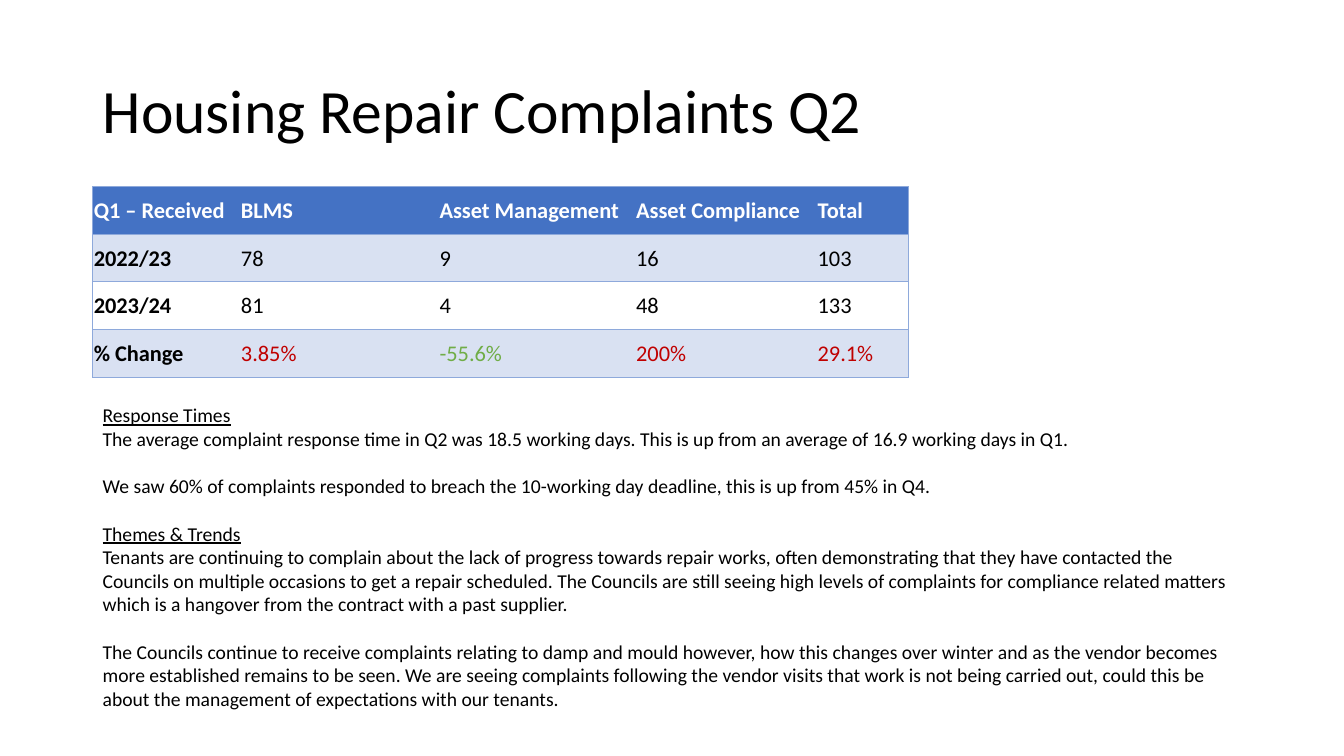
from lxml.etree import SubElement
from pptx import Presentation
from pptx.dml.color import RGBColor
from pptx.enum.text import MSO_ANCHOR
from pptx.oxml.ns import qn
from pptx.util import Inches, Pt

BLACK = RGBColor(0, 0, 0)
WHITE = RGBColor(0xFF, 0xFF, 0xFF)
BLUE = RGBColor(0x44, 0x72, 0xC4)
PALE = RGBColor(0xD9, 0xE1, 0xF2)
RULE = RGBColor(0x8E, 0xA9, 0xDB)
RED = RGBColor(0xC0, 0, 0)
GREEN = RGBColor(0x70, 0xAD, 0x47)

FONT = "Calibri"
TITLE = "Housing Repair Complaints Q2"
ROWS = [
    ("Q1 – Received", "BLMS", "Asset Management", "Asset Compliance", "Total"),
    ("2022/23", "78", "9", "16", "103"),
    ("2023/24", "81", "4", "48", "133"),
    ("% Change", "3.85%", "-55.6%", "200%", "29.1%"),
]
FILLS = [BLUE, PALE, WHITE, PALE]
COL_WIDTHS = [1.46, 1.97, 1.95, 1.8, 0.91]
ROW_HEIGHT = 0.4725
SECTIONS = [
    ("Response Times", [
        "The average complaint response time in Q2 was 18.5 working days. "
        "This is up from an average of 16.9 working days in Q1.",
        "We saw 60% of complaints responded to breach the 10-working day deadline, "
        "this is up from 45% in Q4.",
    ]),
    ("Themes & Trends", [
        "Tenants are continuing to complain about the lack of progress towards repair works, "
        "often demonstrating that they have contacted the Councils on multiple occasions to get "
        "a repair scheduled. The Councils are still seeing high levels of complaints for "
        "compliance related matters which is a hangover from the contract with a past supplier.",
        "The Councils continue to receive complaints relating to damp and mould however, how "
        "this changes over winter and as the vendor becomes more established remains to be seen. "
        "We are seeing complaints following the vendor visits that work is not being carried "
        "out, could this be about the management of expectations with our tenants.",
    ]),
]
LEFT, WIDTH = 0.92, 11.5
BODY_SIZE = 14
BLANK_LINE = Pt(BODY_SIZE * 1.22)


def style(p, size, color=BLACK, bold=False, underline=False):
    for r in p.runs:
        r.font.name = FONT
        r.font.size = Pt(size)
        r.font.color.rgb = color
        r.font.bold = bold
        r.font.underline = underline


def add_text(s, top, height):
    box = s.shapes.add_textbox(Inches(LEFT), Inches(top), Inches(WIDTH), Inches(height))
    box.text_frame.word_wrap = True
    return box.text_frame


def set_borders(cell, visible):
    tc_pr = cell._tc.get_or_add_tcPr()
    for i, side in enumerate("LRTB"):
        ln = SubElement(tc_pr, qn(f"a:ln{side}"), w=str(Pt(0.5)))
        if side in visible:
            fill = SubElement(ln, qn("a:solidFill"))
            SubElement(fill, qn("a:srgbClr"), val=str(RULE))
        else:
            SubElement(ln, qn("a:noFill"))
        tc_pr.insert(i, ln)


def text_color(row, col, text):
    if row == 0:
        return WHITE
    if row == len(ROWS) - 1 and col > 0:
        return GREEN if text.startswith("-") else RED
    return BLACK


def add_complaints_table(s):
    last = len(COL_WIDTHS) - 1
    table = s.shapes.add_table(
        len(ROWS), len(COL_WIDTHS), Inches(LEFT), Inches(1.85),
        Inches(sum(COL_WIDTHS)), Inches(ROW_HEIGHT * len(ROWS))).table
    table.horz_banding = False
    for column, width in zip(table.columns, COL_WIDTHS):
        column.width = Inches(width)
    for i, values in enumerate(ROWS):
        table.rows[i].height = Inches(ROW_HEIGHT)
        for j, value in enumerate(values):
            cell = table.cell(i, j)
            cell.text = value
            cell.vertical_anchor = MSO_ANCHOR.MIDDLE
            cell.margin_left = cell.margin_right = cell.margin_top = Inches(0.01)
            cell.margin_bottom = 0
            cell.fill.solid()
            cell.fill.fore_color.rgb = FILLS[i]
            style(cell.text_frame.paragraphs[0], 16, text_color(i, j, value), i == 0 or j == 0)
            set_borders(cell, "TB" + "L" * (j == 0) + "R" * (j == last))


def add_commentary(s):
    tf = add_text(s, 3.95, 3.4)
    for i, (heading, paragraphs) in enumerate(SECTIONS):
        for j, text in enumerate([heading] + paragraphs):
            p = tf.add_paragraph() if i or j else tf.paragraphs[0]
            p.text = text
            style(p, BODY_SIZE, underline=j == 0)
            if j > 1 or (i and j == 0):
                p.space_before = BLANK_LINE


def main():
    prs = Presentation()
    prs.slide_width, prs.slide_height = Inches(13.33), Inches(7.5)
    s = prs.slides.add_slide(prs.slide_layouts[6])
    tf = add_text(s, 0.4, 1.45)
    tf.vertical_anchor = MSO_ANCHOR.MIDDLE
    tf.text = TITLE
    tf.paragraphs[0].line_spacing = 0.9
    style(tf.paragraphs[0], 44)
    add_commentary(s)
    add_complaints_table(s)
    prs.save("out.pptx")


if __name__ == "__main__":
    main()
